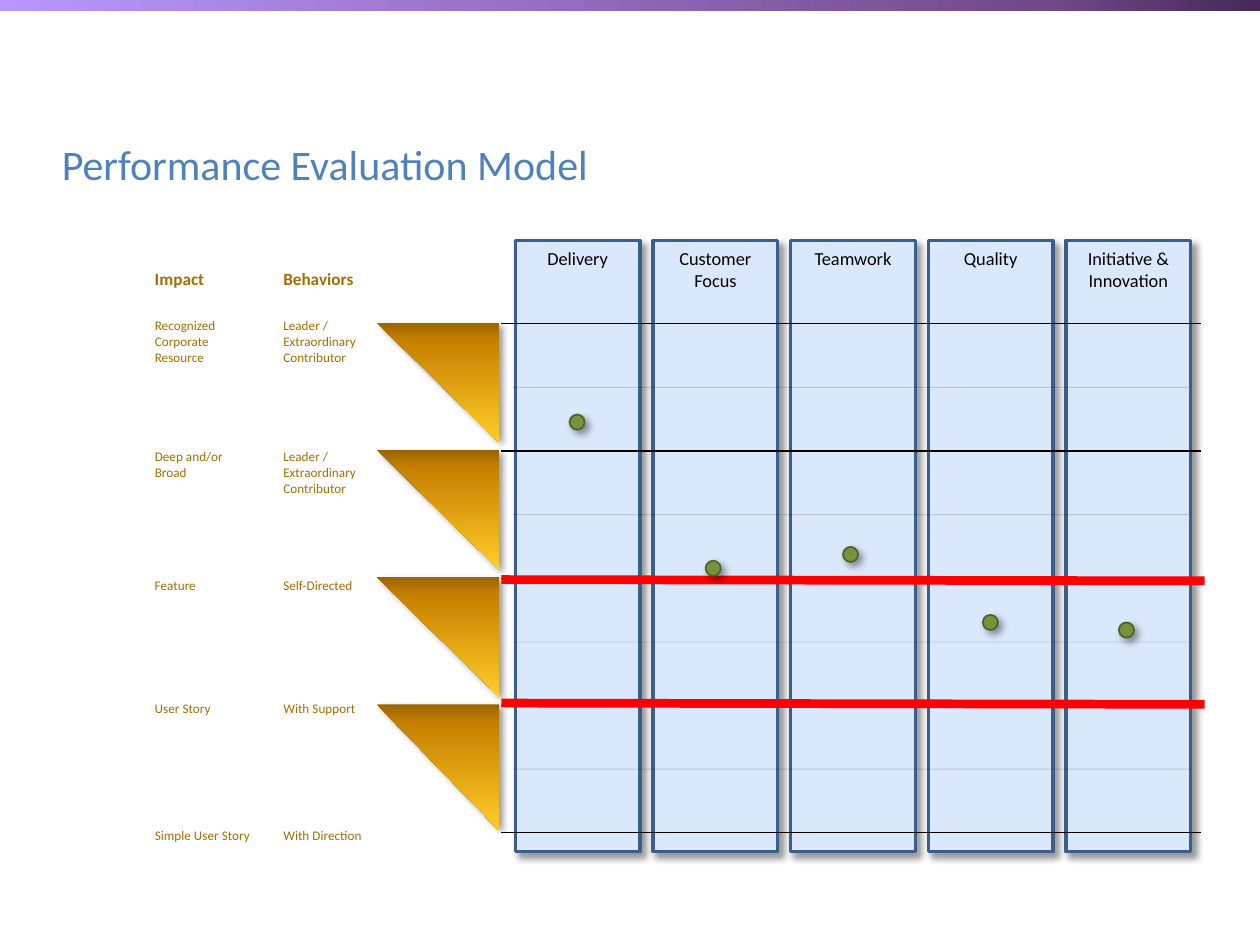
from lxml import etree
from pptx import Presentation
from pptx import util as u
from pptx.dml.color import RGBColor
from pptx.enum import shapes, text
from pptx.oxml.ns import qn

BLACK = RGBColor(0x00, 0x00, 0x00)
RED = RGBColor(0xFF, 0x00, 0x00)
TITLE_BLUE = RGBColor(0x4F, 0x81, 0xBD)
PALE_BLUE = RGBColor(0xDA, 0xE8, 0xFC)
EDGE_BLUE = RGBColor(0x3A, 0x5F, 0x8C)
BROWN = RGBColor(0xA8, 0x6C, 0x00)
GREEN = RGBColor(0x77, 0x93, 0x3C)
DARK_GREEN = RGBColor(0x4F, 0x62, 0x28)
PURPLES = [(0, RGBColor(0x44, 0x2A, 0x58)), (17, RGBColor(0x71, 0x49, 0x89)),
           (100, RGBColor(0xBA, 0x97, 0xFF))]
GOLDS = [(0, RGBColor(0x9A, 0x64, 0x00)), (15, RGBColor(0xC6, 0x80, 0x00)),
         (100, RGBColor(0xFF, 0xCD, 0x28))]

COLUMNS = ["Delivery", "Customer Focus", "Teamwork", "Quality", "Initiative & Innovation"]
SCORES = [(0.43, 1.38), (1.51, 2.54), (2.6, 2.43), (3.71, 2.97), (4.79, 3.03)]
IMPACT = [("Recognized\nCorporate\nResource", 0.78), ("Deep and/or\nBroad", 0.81),
          ("Feature", 0.56), ("User Story", 0.7), ("Simple User Story", 1.05)]
BEHAVIORS = [("Leader /\nExtraordinary\nContributor", 0.85),
             ("Leader /\nExtraordinary\nContributor", 0.85),
             ("Self-Directed", 0.81), ("With Support", 0.81), ("With Direction", 0.85)]
LABEL_TOPS = [0.39, 1.43, 2.45, 3.43, 4.44]
ROW = 1.01


def sub(parent, tag, **attrs):
    return etree.SubElement(parent, qn(tag), **{k: str(v) for k, v in attrs.items()})


def add_shadow(sp):
    shadow = sub(sp._element.spPr.find(qn("a:effectLst")), "a:outerShdw",
                 blurRad=u.Pt(4), dist=u.Pt(3), dir=45 * 60000, algn="tl", rotWithShape=0)
    sub(sub(shadow, "a:srgbClr", val=BLACK), "a:alpha", val=40000)


def add_gradient(sp, stops, angle):
    sp.fill.gradient()
    grad = sp._element.spPr.find(qn("a:gradFill"))
    for child in list(grad):
        grad.remove(child)
    grad.set("rotWithShape", "1")
    stop_list = sub(grad, "a:gsLst")
    for pos, color in stops:
        sub(sub(stop_list, "a:gs", pos=pos * 1000), "a:srgbClr", val=color)
    sub(grad, "a:lin", ang=angle * 60000, scaled=0)


def add_box(s, kind, x, y, w, h, fill=None, line=None, width=1):
    sp = s.shapes.add_shape(kind, u.Inches(x), u.Inches(y), u.Inches(w), u.Inches(h))
    if fill is not None:
        sp.fill.solid()
        sp.fill.fore_color.rgb = fill
    if line is None:
        sp.line.fill.background()
    else:
        sp.line.color.rgb = line
        sp.line.width = u.Pt(width)
    sp.shadow.inherit = False
    return sp


def add_line(s, x1, y1, x2, y2, color, width, alpha=None):
    ln = s.shapes.add_connector(shapes.MSO_CONNECTOR.STRAIGHT, u.Inches(x1), u.Inches(y1),
                                u.Inches(x2), u.Inches(y2))
    ln.line.color.rgb = color
    ln.line.width = u.Pt(width)
    spPr = ln._element.spPr
    if alpha:
        sub(next(spPr.iter(qn("a:srgbClr"))), "a:alpha", val=alpha * 1000)
    sub(spPr, "a:effectLst")


def add_label(s, x, y, w, words, size, bold=False):
    lines = words.split("\n")
    h = 0.27 if bold else 0.1 + 0.127 * len(lines)
    tf = s.shapes.add_textbox(u.Inches(x), u.Inches(y), u.Inches(w), u.Inches(h)).text_frame
    tf.word_wrap = False
    tf.auto_size = text.MSO_AUTO_SIZE.SHAPE_TO_FIT_TEXT
    tf.text = words
    for p in tf.paragraphs:
        p.font.name = "Calibri"
        p.font.size = u.Pt(size)
        p.font.bold = bold
        p.font.color.rgb = BROWN


def header(s, x, y, w, h):
    bar = add_box(s, shapes.MSO_SHAPE.RECTANGLE, x, y, w, h)
    add_gradient(bar, PURPLES, 180)


def title(s, x, y, w, h):
    sp = s.shapes.title
    sp.left, sp.top, sp.width, sp.height = (u.Inches(v) for v in (x, y, w, h))
    tf = sp.text_frame
    tf.text = "Performance Evaluation Model"
    tf.vertical_anchor = text.MSO_ANCHOR.MIDDLE
    p = tf.paragraphs[0]
    p.alignment = text.PP_ALIGN.LEFT
    p.font.name = "Calibri"
    p.font.size = u.Pt(24)
    p.font.color.rgb = TITLE_BLUE


def columns(s, x, y, w, h):
    pitch = (w - 0.99) / (len(COLUMNS) - 1)
    for i, name in enumerate(COLUMNS):
        sp = add_box(s, shapes.MSO_SHAPE.RECTANGLE, x + i * pitch, y, 0.99, h,
                     PALE_BLUE, EDGE_BLUE, 3)
        sp.line.width = u.Pt(2)
        add_shadow(sp)
        tf = sp.text_frame
        tf.word_wrap = True
        tf.vertical_anchor = text.MSO_ANCHOR.TOP
        tf.text = name
        p = tf.paragraphs[0]
        p.alignment = text.PP_ALIGN.CENTER
        p.font.name = "Calibri"
        p.font.size = u.Pt(10.5)
        p.font.color.rgb = BLACK


def levels(s, x, y, w):
    for i in range(5):
        add_line(s, x, y + i * ROW, x + w, y + i * ROW, BLACK, 0.75)
    for i in range(4):
        mid = y + (i + 0.5) * ROW
        add_line(s, x + 0.09, mid, x + w - 0.09, mid, BLACK, 0.5, 15)


def wedges(s, x, y, w):
    for i, h in enumerate([0.95, 0.95, 0.95, 1]):
        sp = add_box(s, shapes.MSO_SHAPE.RIGHT_TRIANGLE, x, y + i * ROW, w, h)
        sp.rotation = 180
        add_gradient(sp, GOLDS, 270)
        add_shadow(sp)


def scale(s, x, y, heading, heading_width, labels):
    add_label(s, x, y, heading_width, heading, 9.8, True)
    for top, (words, width) in zip(LABEL_TOPS, labels):
        add_label(s, x, y + top, width, words, 7.5)


def scores(s, x, y):
    for dx, dy in SCORES:
        add_shadow(add_box(s, shapes.MSO_SHAPE.OVAL, x + dx, y + dy, 0.12, 0.12,
                           GREEN, DARK_GREEN))


def thresholds(s, x, y, w):
    for top in (y, y + 0.98):
        add_line(s, x + w, top + 0.01, x, top, RED, 5)


def main():
    prs = Presentation()
    prs.slide_width, prs.slide_height = u.Inches(10), u.Inches(7.5)
    s = prs.slides.add_slide(prs.slide_layouts[5])
    header(s, -0.02, -0.02, 10.02, 0.11)
    title(s, 0.39, 1.05, 9.25, 0.5)
    columns(s, 4.09, 1.91, 5.36, 4.85)
    levels(s, 3.98, 2.57, 5.55)
    wedges(s, 2.99, 2.56, 0.97)
    scale(s, 2.15, 2.08, "Behaviors", 0.86, BEHAVIORS)
    scale(s, 1.13, 2.08, "Impact", 0.64, IMPACT)
    thresholds(s, 3.98, 4.6, 5.58)
    scores(s, 4.09, 1.91)
    prs.save("out.pptx")


if __name__ == "__main__":
    main()
